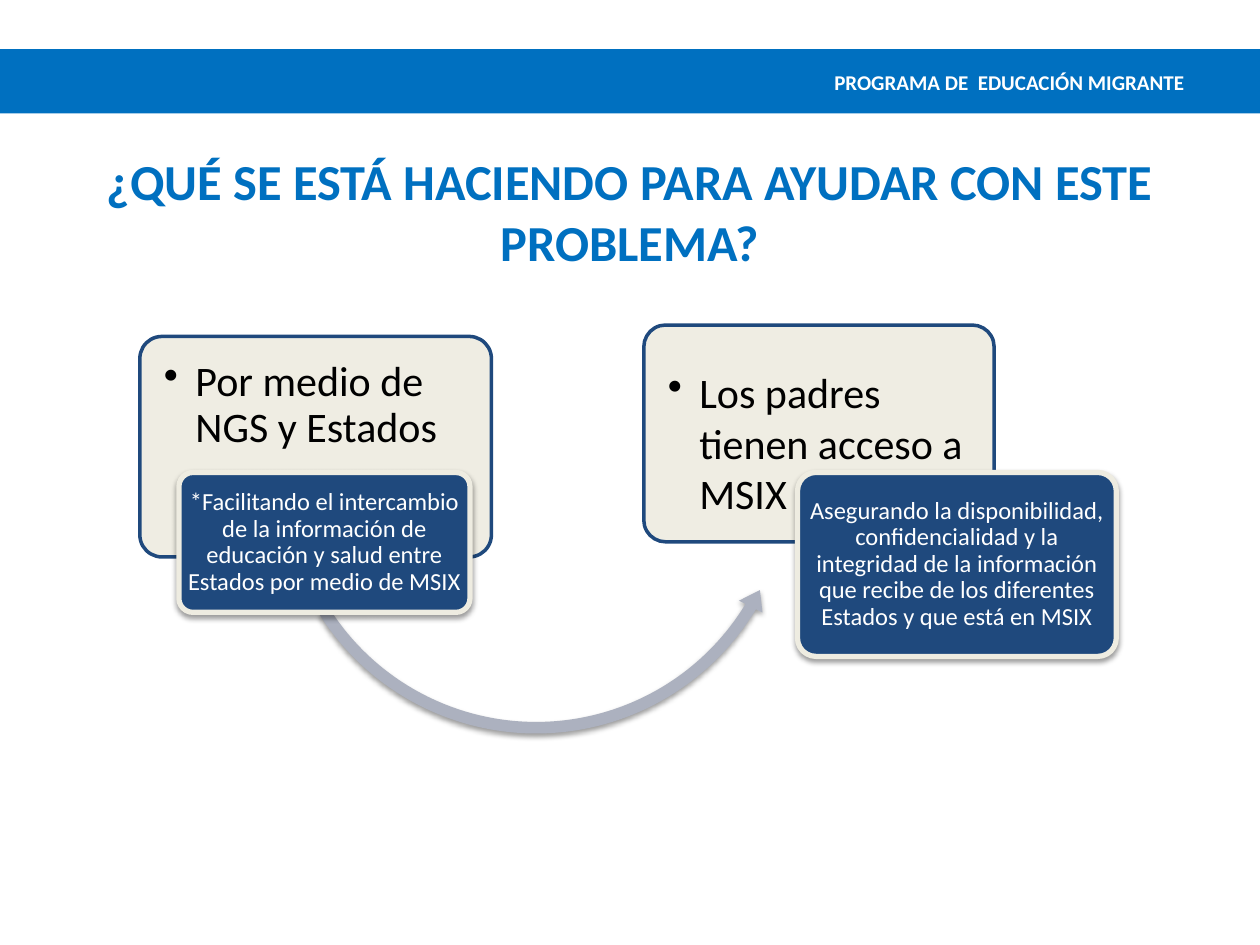
from dataclasses import dataclass

from lxml import etree
from pptx import Presentation
from pptx.dml.color import RGBColor
from pptx.enum.shapes import MSO_SHAPE
from pptx.enum.text import MSO_ANCHOR as Anchor, PP_ALIGN as Align
from pptx.oxml.ns import qn
from pptx.util import Inches, Pt


@dataclass(frozen=True)
class Theme:
    font: str = "Calibri"
    blue: str = "0070C0"
    navy: str = "1F497D"
    cream: str = "EEECE1"
    arrow: str = "ACB1BF"
    white: str = "FFFFFF"
    black: str = "000000"
    header_size: float = 12
    title_size: float = 28.8
    card_size: float = 24
    badge_size: float = 14


THEME = Theme()


def add_child(parent, tag, **attributes):
    return etree.SubElement(parent, qn(tag), attributes)


def set_font(paragraph, size, color, bold=False):
    font = paragraph.font
    font.name, font.size, font.bold = THEME.font, Pt(size), bold
    font.color.rgb = RGBColor.from_string(color)


def set_margins(frame, horizontal, vertical):
    frame.margin_left = frame.margin_right = Inches(horizontal)
    frame.margin_top = frame.margin_bottom = Inches(vertical)


def add_filled_shape(slide, preset, box, fill, line=None, line_width=0):
    shape = slide.shapes.add_shape(preset, *map(Inches, box))
    shape.shadow.inherit = False
    shape.fill.solid()
    shape.fill.fore_color.rgb = RGBColor.from_string(fill)
    if line:
        shape.line.color.rgb = RGBColor.from_string(line)
        shape.line.width = Pt(line_width)
    else:
        shape.line.fill.background()
    return shape


def add_soft_shadow(shape):
    effects = shape._element.spPr.find(qn("a:effectLst"))
    shadow = add_child(effects, "a:outerShdw", blurRad=str(Pt(3.1)),
                       dist=str(Pt(1.6)), dir="5400000", rotWithShape="0")
    color = add_child(shadow, "a:srgbClr", val=THEME.black)
    add_child(color, "a:alpha", val="38000")


def add_header(slide, box):
    """Full-width band with the programme name at the right."""
    left, top, width, height = box
    add_filled_shape(slide, MSO_SHAPE.RECTANGLE, box, THEME.blue)
    label = slide.shapes.add_textbox(Inches(left + 1.92), Inches(top + 0.11),
                                     Inches(width - 2.42), Inches(height))
    label.text_frame.word_wrap = True
    paragraph = label.text_frame.paragraphs[0]
    paragraph.text = "PROGRAMA DE  EDUCACIÓN MIGRANTE"
    paragraph.alignment = Align.RIGHT
    set_font(paragraph, THEME.header_size, THEME.white, bold=True)


def add_title(slide, box):
    title = slide.shapes.title
    title.left, title.top, title.width, title.height = map(Inches, box)
    frame = title.text_frame
    frame.word_wrap = True
    frame.vertical_anchor = Anchor.MIDDLE
    paragraph = frame.paragraphs[0]
    # The closing line break lifts the centred title
    paragraph.text = "¿QUÉ SE ESTÁ HACIENDO PARA AYUDAR CON ESTE PROBLEMA?\v"
    paragraph.alignment = Align.CENTER
    set_font(paragraph, THEME.title_size, THEME.blue, bold=True)


def add_card(slide, box, text, anchor, line_spacing):
    """Pale rounded card with one bullet."""
    card = add_filled_shape(slide, MSO_SHAPE.ROUNDED_RECTANGLE, box,
                            THEME.cream, THEME.navy, 2)
    card.adjustments[0] = 0.1
    fill_color = card._element.spPr.find(qn("a:solidFill"))[0]
    add_child(fill_color, "a:alpha", val="90000")
    frame = card.text_frame
    frame.word_wrap, frame.vertical_anchor = True, anchor
    set_margins(frame, 0.14, 0.14)
    paragraph = frame.paragraphs[0]
    paragraph.text = text
    paragraph.alignment = Align.LEFT
    paragraph.line_spacing = line_spacing
    properties = paragraph._p.get_or_add_pPr()
    properties.set("marL", str(Inches(0.25)))
    properties.set("indent", str(Inches(-0.25)))
    add_child(properties, "a:buChar", char="•")
    set_font(paragraph, THEME.card_size, THEME.black)


def add_badge(slide, box, text):
    """Dark rounded label that overlaps the foot of a card."""
    badge = add_filled_shape(slide, MSO_SHAPE.ROUNDED_RECTANGLE, box,
                             THEME.navy, THEME.cream, 3)
    badge.adjustments[0] = 0.1
    add_soft_shadow(badge)
    frame = badge.text_frame
    frame.word_wrap, frame.vertical_anchor = True, Anchor.MIDDLE
    set_margins(frame, 0.03, 0.02)
    paragraph = frame.paragraphs[0]
    paragraph.text = text
    paragraph.alignment = Align.CENTER
    paragraph.line_spacing = 0.9
    set_font(paragraph, THEME.badge_size, THEME.white)


def add_arrow(slide, box):
    """Curved arrow from the first step to the second."""
    arrow = add_filled_shape(slide, MSO_SHAPE.LEFT_CIRCULAR_ARROW, box, THEME.arrow)
    # Thickness, head angle, end angle, start angle, head width
    for index, value in enumerate((0.022, 2.6, 18.69, 88.58, 0.025)):
        arrow.adjustments[index] = value
    add_soft_shadow(arrow)


def add_process(slide, box):
    """Two steps, each a card and a badge, joined by the arrow."""
    left, top = box[:2]

    def place(x, y, width, height):
        return left + x, top + y, width, height

    add_card(slide, place(0, 0.98, 2.79, 1.75), "Por medio de NGS y Estados",
             Anchor.TOP, 0.9)
    add_arrow(slide, place(1.05, 0, 4.19, 4.19))
    add_badge(slide, place(0.31, 2.06, 2.31, 1.11),
              "*Facilitando el intercambio de la información de educación "
              "y salud entre Estados por medio de MSIX")
    add_card(slide, place(4, 0.89, 2.78, 1.72), "Los padres tienen acceso a MSIX",
             Anchor.BOTTOM, 1.0)
    add_badge(slide, place(5.22, 2.06, 2.53, 1.46),
              "Asegurando la disponibilidad, confidencialidad y la integridad "
              "de la información que recibe de los diferentes Estados "
              "y que está en MSIX")


def main():
    presentation = Presentation()
    presentation.slide_width, presentation.slide_height = Inches(10), Inches(7.5)
    slide = presentation.slides.add_slide(presentation.slide_layouts[5])
    add_header(slide, (0, 0.39, 10, 0.51))
    add_title(slide, (0.5, 1.33, 9, 1.17))
    add_process(slide, (1.11, 1.69, 7.75, 4.19))
    presentation.save("out.pptx")


if __name__ == "__main__":
    main()
